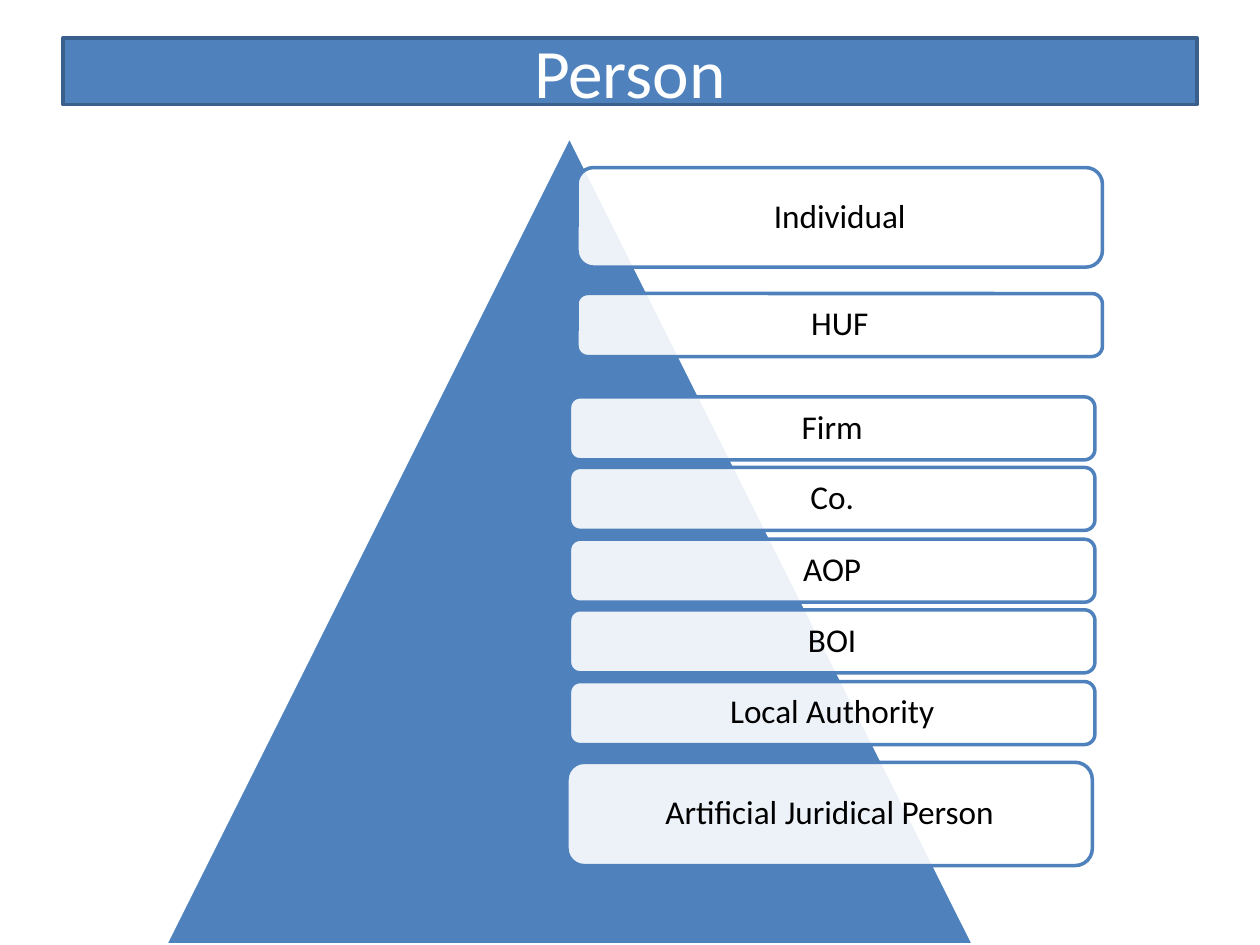
from lxml.etree import SubElement
from pptx import Presentation
from pptx.dml.color import RGBColor
from pptx.enum.shapes import MSO_SHAPE
from pptx.enum.text import MSO_ANCHOR, MSO_AUTO_SIZE, PP_ALIGN
from pptx.oxml.ns import qn
from pptx.util import Inches, Pt

COLORS = {"blue": "4F81BD", "edge": "3A5F8C", "white": "FFFFFF", "black": "000000"}
FONT = "Calibri"
CARD_WIDTH = 4.17
ROW_HEIGHT = 0.5
ROW_PITCH = 0.565
FIRM_TOP = 3.15
MIDDLE_ROWS = ["Firm", "Co.", "AOP", "BOI", "Local Authority"]
PERSON_TYPES = [
    ("Individual", 4.58, 1.33, 0.79),
    ("HUF", 4.58, 2.33, ROW_HEIGHT),
    *[(label, 4.52, round(FIRM_TOP + row * ROW_PITCH, 2), ROW_HEIGHT)
      for row, label in enumerate(MIDDLE_ROWS)],
    ("Artificial Juridical Person", 4.5, 6.05, 0.82),
]


def rgb(name):
    return RGBColor.from_string(COLORS[name])


def paint(shape, fill, line):
    shape.shadow.inherit = False
    shape.fill.solid()
    shape.fill.fore_color.rgb = rgb(fill)
    shape.line.color.rgb = rgb(line)
    shape.line.width = Pt(2)


def write(frame, text, size, color):
    frame.word_wrap = True
    frame.auto_size = MSO_AUTO_SIZE.NONE
    frame.vertical_anchor = MSO_ANCHOR.MIDDLE
    paragraph = frame.paragraphs[0]
    paragraph.alignment = PP_ALIGN.CENTER
    run = paragraph.add_run()
    run.text = text
    run.font.name = FONT
    run.font.size = Pt(size)
    run.font.color.rgb = rgb(color)
    return paragraph


def add_banner(slide, left, top, width, height):
    banner = slide.shapes.title
    banner.left, banner.top = Inches(left), Inches(top)
    banner.width, banner.height = Inches(width), Inches(height)
    banner.fill.solid()
    banner.fill.fore_color.rgb = rgb("blue")
    banner.line.color.rgb = rgb("edge")
    banner.line.width = Pt(2)
    write(banner.text_frame, "Person", 39.6, "white")


def add_card(group, label, left, top, width, height):
    card = group.shapes.add_shape(
        MSO_SHAPE.ROUNDED_RECTANGLE,
        Inches(left), Inches(top), Inches(width), Inches(height))
    paint(card, "white", "blue")
    fill_color = card.fill._xPr.find(qn("a:solidFill"))[0]
    SubElement(fill_color, qn("a:alpha"), val="90000")
    frame = card.text_frame
    frame.margin_left = frame.margin_right = Inches(0.08)
    frame.margin_top = frame.margin_bottom = Inches(0.08)
    write(frame, label, 19, "black").line_spacing = 0.9


def add_pyramid(slide, left, top, width, height):
    group = slide.shapes.add_group_shape()
    triangle = group.shapes.add_shape(
        MSO_SHAPE.ISOSCELES_TRIANGLE,
        Inches(left), Inches(top), Inches(width), Inches(height))
    paint(triangle, "blue", "white")
    for label, card_left, card_top, card_height in PERSON_TYPES:
        add_card(group, label, card_left, card_top, CARD_WIDTH, card_height)


def main():
    presentation = Presentation()
    presentation.slide_width = Inches(10)
    presentation.slide_height = Inches(7.5)
    slide = presentation.slides.add_slide(presentation.slide_layouts[5])
    add_banner(slide, 0.5, 0.3, 9, 0.53)
    add_pyramid(slide, 1.31, 1.08, 6.42, 6.42)
    presentation.save("out.pptx")


if __name__ == "__main__":
    main()
